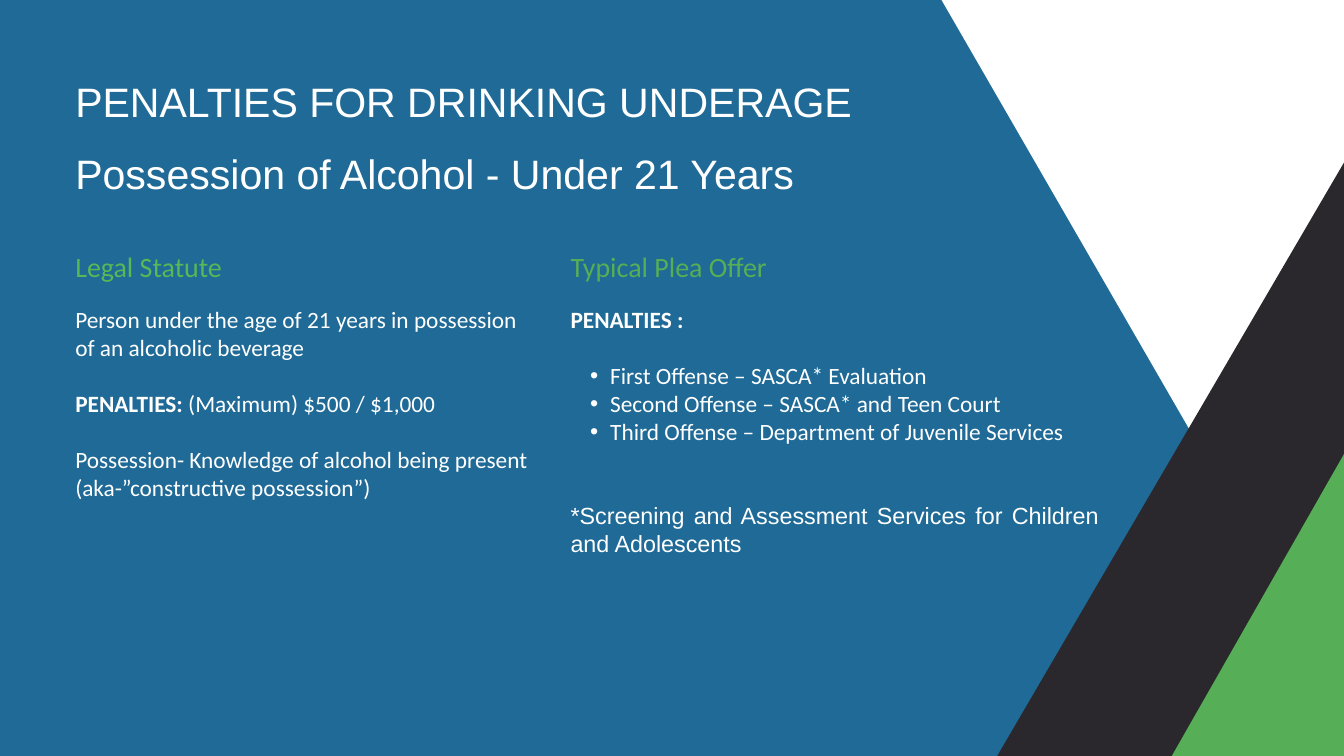
from pptx import Presentation
from pptx.dml.color import RGBColor
from pptx.enum.shapes import MSO_SHAPE
from pptx.enum.text import MSO_ANCHOR, MSO_AUTO_SIZE, PP_ALIGN
from pptx.util import Pt
from lxml import etree

LEFT, JUSTIFY = PP_ALIGN.LEFT, PP_ALIGN.JUSTIFY
TOP, NO_FIT = MSO_ANCHOR.TOP, MSO_AUTO_SIZE.NONE
RECTANGLE = MSO_SHAPE.RECTANGLE
NS = "{http://schemas.openxmlformats.org/drawingml/2006/main}"

THEME = {
    "blue": RGBColor.from_string("1F6A96"),
    "white": RGBColor.from_string("FFFFFF"),
    "dark": RGBColor.from_string("2A272D"),
    "green": RGBColor.from_string("56AE57"),
    "light_green": RGBColor.from_string("56B857"),
    "title": 44,
    "heading": 30,
    "body": 25,
    "title_font": "Arial",
    "body_font": "Calibri",
}
LINE = 1.2  # line height as a multiple of the type size
TEXT_LEFT, OFFER_LEFT = 80.64, 611.28
HEADING_TOP, BODY_TOP = 267.12, 326.88


def place(sp, left, top, width, height):
    """Move a placeholder and clear its margins, anchor and autofit."""
    sp.left, sp.top, sp.width, sp.height = Pt(left), Pt(top), Pt(width), Pt(height)
    tf = sp.text_frame
    tf.margin_left = tf.margin_top = tf.margin_right = tf.margin_bottom = 0
    tf.word_wrap, tf.auto_size, tf.vertical_anchor = True, NO_FIT, TOP
    return tf


def style(p, size, font, color, align=LEFT, before=0, bullet=False):
    """Format a paragraph, its bullet and its runs."""
    p.alignment = align
    p.level = 1 if bullet else 0
    p.line_spacing = Pt(size * LINE)
    p.space_before, p.space_after = Pt(before), Pt(0)
    pPr = p._p.get_or_add_pPr()
    pPr.set("marL", str(Pt(42.48) if bullet else 0))
    pPr.set("indent", str(Pt(-21.6) if bullet else 0))
    if bullet:
        etree.SubElement(pPr, NS + "buFont", typeface="Arial")
        etree.SubElement(pPr, NS + "buChar", char="•")
    else:
        etree.SubElement(pPr, NS + "buNone")
    for r in p.runs:
        r.font.size, r.font.name, r.font.color.rgb = Pt(size), font, color
        r.font.bold = r.text.startswith("PENALTIES:") or r.text == "PENALTIES :"


prs = Presentation()
prs.slide_width, prs.slide_height = Pt(1440), Pt(810)
s = prs.slides.add_slide(prs.slide_layouts[4])  # Comparison
s.background.fill.solid()
s.background.fill.fore_color.rgb = THEME["blue"]
ph = {sp.placeholder_format.idx: sp for sp in s.placeholders}

# Title
tf = place(ph[0], TEXT_LEFT, 82.08, 1278, 129.6)
tf.text = "PENALTIES FOR DRINKING UNDERAGE\nPossession of Alcohol - Under 21 Years"
for p, before in zip(tf.paragraphs, (0, 24)):
    style(p, THEME["title"], THEME["title_font"], THEME["white"], before=before)

# Column headings
headings = [
    (1, TEXT_LEFT, 311.04, "Legal Statute", "light_green"),
    (3, OFFER_LEFT, 336.24, "Typical Plea Offer", "green"),
]
for idx, left, width, text, color in headings:
    tf = place(ph[idx], left, HEADING_TOP, width, 36.72)
    tf.text = text
    style(tf.paragraphs[0], THEME["heading"], THEME["body_font"], THEME[color], JUSTIFY)

# Legal statute
body_line = THEME["body"] * LINE
tf = place(ph[2], TEXT_LEFT, BODY_TOP, 486.72, 270.72)
tf.text = "\n".join([
    "Person under the age of 21 years in possession of an alcoholic beverage",
    "PENALTIES: ",
    "Possession- Knowledge of alcohol being present (aka-”constructive possession”)",
])
tf.paragraphs[1].add_run().text = "(Maximum) $500 / $1,000"
for i, p in enumerate(tf.paragraphs):
    style(p, THEME["body"], THEME["body_font"], THEME["white"],
          before=body_line if i else 0)

# Plea offer: text, font, blank lines before, bullet
offer = [
    ("PENALTIES :", "body_font", 0, False),
    ("First Offense – SASCA* Evaluation", "body_font", 1, True),
    ("Second Offense – SASCA* and Teen Court", "body_font", 0, True),
    ("Third Offense – Department of Juvenile Services", "body_font", 0, True),
    ("*Screening and Assessment Services for Children and Adolescents",
     "title_font", 2, False),
]
tf = place(ph[4], OFFER_LEFT, BODY_TOP, 565.92, 333.36)
tf.text = "\n".join(row[0] for row in offer)
for p, (_, font, gap, bullet) in zip(tf.paragraphs, offer):
    style(p, THEME["body"], THEME[font], THEME["white"], JUSTIFY,
          gap * body_line, bullet)

# Slanted bands on the right
bands = [
    (1224, -243.36, 540.72, 1087.2, 330, "white"),
    (1227.6, 16.56, 166.32, 1087.2, 30.3, "dark"),
    (1350, 210.96, 166.32, 910.8, 29.7, "green"),
]
for left, top, width, height, angle, color in bands:
    sp = s.shapes.add_shape(RECTANGLE, Pt(left), Pt(top), Pt(width), Pt(height))
    sp.rotation = angle
    sp.shadow.inherit = False
    sp.fill.solid()
    sp.fill.fore_color.rgb = THEME[color]
    sp.line.fill.background()

prs.save("out.pptx")
